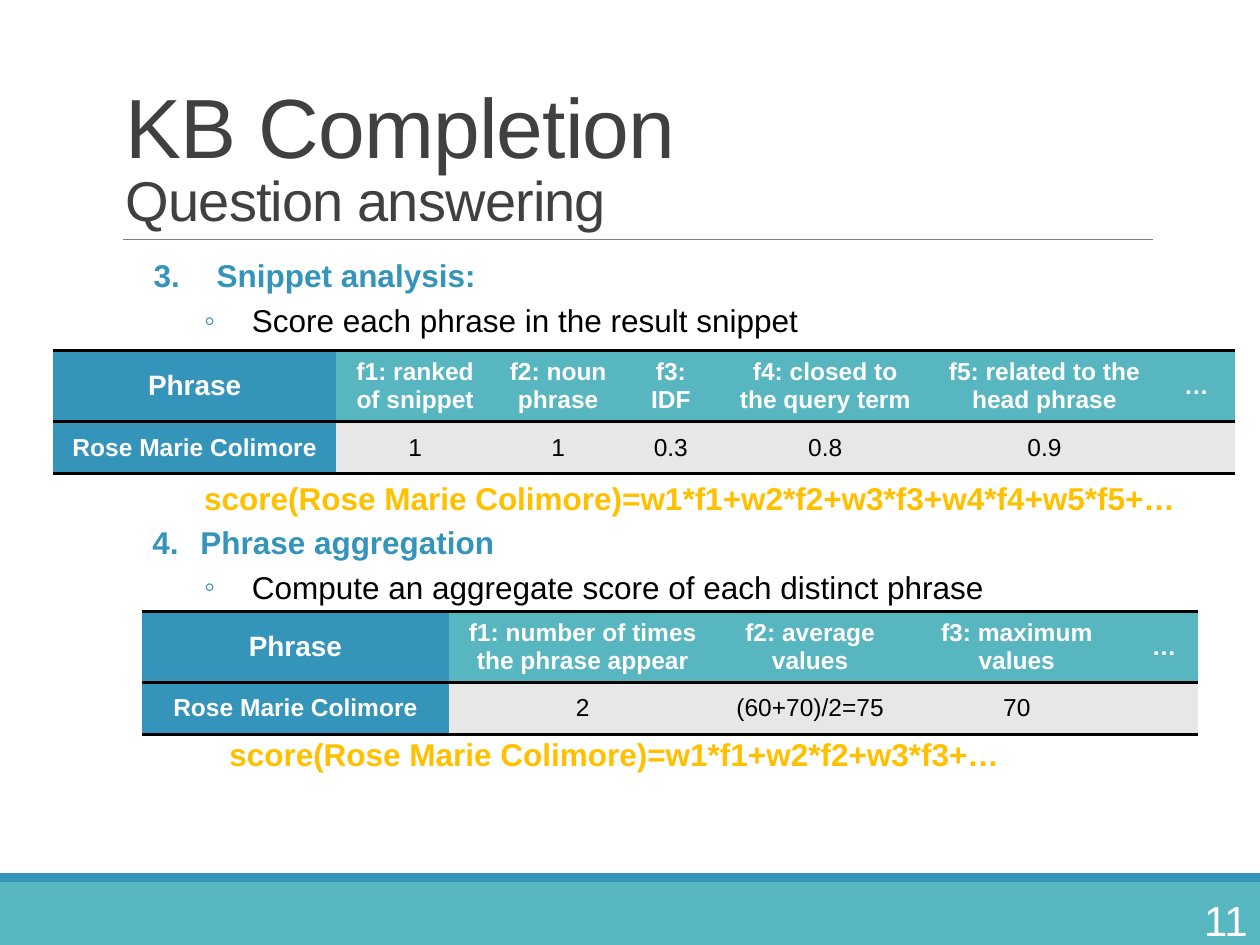
from lxml import etree
from pptx import Presentation
from pptx.dml.color import RGBColor
from pptx.enum.shapes import MSO_CONNECTOR, MSO_SHAPE
from pptx.enum.text import MSO_ANCHOR, PP_ALIGN
from pptx.oxml.ns import qn
from pptx.util import Inches, Pt

RECTANGLE = MSO_SHAPE.RECTANGLE
STRAIGHT = MSO_CONNECTOR.STRAIGHT
TOP, MIDDLE, BOTTOM = MSO_ANCHOR.TOP, MSO_ANCHOR.MIDDLE, MSO_ANCHOR.BOTTOM
LEFT, CENTER, RIGHT = PP_ALIGN.LEFT, PP_ALIGN.CENTER, PP_ALIGN.RIGHT

COLORS = {
    "blue": "3494BA",
    "teal": "58B6C0",
    "gray": "E7E7E7",
    "rule": "808080",
    "title": "404040",
    "gold": "FFC000",
    "black": "000000",
    "white": "FFFFFF",
}


def color(name):
    return RGBColor.from_string(COLORS[name])


def add_element(parent, tag, **attributes):
    return etree.SubElement(parent, qn(tag), attributes)


class SlideBuilder:
    """Draws the elements of one slide in a shared style."""

    font = "Arial"

    def __init__(self, slide):
        self.slide = slide

    def format_run(self, run, size, color_name, bold=False):
        run.font.name = self.font
        run.font.size = Pt(size)
        run.font.bold = bold
        run.font.color.rgb = color(color_name)

    def bar(self, top, height, fill):
        shape = self.slide.shapes.add_shape(
            RECTANGLE, 0, Inches(top), Inches(10), Inches(height))
        shape.shadow.inherit = False
        shape.fill.solid()
        shape.fill.fore_color.rgb = color(fill)
        shape.line.fill.background()

    def rule(self, left, right, y):
        line = self.slide.shapes.add_connector(
            STRAIGHT, Inches(left), Inches(y), Inches(right), Inches(y))
        line.line.color.rgb = color("rule")
        line.line.width = Pt(0.5)
        add_element(line._element.spPr, "a:effectLst")

    def text_box(self, left, top, width, height, anchor=TOP):
        box = self.slide.shapes.add_textbox(
            Inches(left), Inches(top), Inches(width), Inches(height))
        box.text_frame.word_wrap = True
        box.text_frame.vertical_anchor = anchor
        return box.text_frame

    def title(self, heading, subheading):
        paragraph = self.text_box(0.9, 0.31, 8.25, 1.59, BOTTOM).paragraphs[0]
        paragraph.text = f"{heading}\v{subheading}"
        paragraph.line_spacing = 0.85
        for run, size in zip(paragraph.runs, (48, 32)):
            self.format_run(run, size, "title")
            run.font._element.set("spc", "-50")

    def body(self, items):
        text_frame = self.text_box(0.9, 2.02, 8.77, 4.4)
        text_frame.margin_left = text_frame.margin_right = 0
        text_frame.text = "\n".join(item["text"] for item in items)
        for paragraph, item in zip(text_frame.paragraphs, items):
            paragraph.line_spacing = 0.9
            paragraph.space_before = Pt(item.get("before", 2))
            paragraph.space_after = Pt(4)
            self.format_run(paragraph.runs[0], 18, item["color"], item["bold"])
            self.bullet(paragraph, item)

    def bullet(self, paragraph, item):
        properties = paragraph._p.get_or_add_pPr()
        indent, hanging = item["indent"]
        properties.set("marL", str(Inches(indent)))
        properties.set("indent", str(Inches(-hanging)))
        if not hanging:
            add_element(properties, "a:buNone")
            return
        bullet_color = add_element(properties, "a:buClr")
        add_element(bullet_color, "a:srgbClr", val=COLORS["blue"])
        add_element(properties, "a:buFont", typeface=self.font)
        if "number" in item:
            add_element(properties, "a:buAutoNum", type="arabicPeriod",
                        startAt=str(item["number"]))
        else:
            add_element(properties, "a:buChar", char="◦")

    def slide_number(self, number):
        paragraph = self.text_box(8.92, 7.1, 1.08, 0.4, MIDDLE).paragraphs[0]
        paragraph.text = number
        paragraph.alignment = RIGHT
        self.format_run(paragraph.runs[0], 24, "white")

    def table(self, left, top, widths, rows):
        table = self.slide.shapes.add_table(
            len(rows), len(widths), Inches(left), Inches(top),
            Inches(sum(widths)), Inches(0.94)).table
        table.first_row = table.horz_banding = False
        for column, width in zip(table.columns, widths):
            column.width = Inches(width)
        for row, height in zip(table.rows, (0.53, 0.41)):
            row.height = Inches(height)
        for row_index, row in enumerate(rows):
            for column_index, text in enumerate(row):
                self.cell(table.cell(row_index, column_index), text,
                          row_index == 0, column_index == 0)

    def cell(self, cell, text, is_header, is_label):
        cell.text = text
        cell.vertical_anchor = MIDDLE
        cell.fill.solid()
        fill = "blue" if is_label else "teal" if is_header else "gray"
        cell.fill.fore_color.rgb = color(fill)
        paragraph = cell.text_frame.paragraphs[0]
        paragraph.alignment = CENTER
        strong = is_header or is_label
        for run in paragraph.runs:
            self.format_run(run, 16 if is_header and is_label else 14,
                            "white" if strong else "black", strong)
        self.cell_borders(cell)

    def cell_borders(self, cell):
        properties = cell._tc.get_or_add_tcPr()
        for index, side in enumerate(("lnL", "lnR", "lnT", "lnB")):
            border = etree.Element(qn(f"a:{side}"), w=str(Pt(2)))
            if side in ("lnT", "lnB"):
                fill = add_element(border, "a:solidFill")
                add_element(fill, "a:srgbClr", val=COLORS["black"])
            else:
                add_element(border, "a:noFill")
            properties.insert(index, border)


def main():
    presentation = Presentation()
    presentation.slide_width = Inches(10)
    presentation.slide_height = Inches(7.5)
    slide = presentation.slides.add_slide(presentation.slide_layouts[6])
    builder = SlideBuilder(slide)

    builder.bar(7, 0.5, "teal")
    builder.bar(6.93, 0.07, "blue")
    builder.rule(0.98, 9.15, 1.9)
    builder.title("KB Completion", "Question answering")

    step = {"color": "blue", "bold": True}
    detail = {"color": "black", "bold": False, "indent": (1.1, 0.38)}
    formula = {"color": "gold", "bold": True}
    builder.body([
        {**step, "text": "Snippet analysis:", "number": 3,
         "indent": (0.82, 0.5)},
        {**detail, "text": "Score each phrase in the result snippet"},
        {**formula, "before": 78, "indent": (0.72, 0),
         "text": "score(Rose Marie Colimore)=w1*f1+w2*f2+w3*f3+w4*f4+w5*f5+…"},
        {**step, "text": "Phrase aggregation", "number": 4,
         "indent": (0.69, 0.38)},
        {**detail,
         "text": "Compute an aggregate score of each distinct phrase"},
        {**formula, "before": 72, "indent": (0.92, 0),
         "text": "score(Rose Marie Colimore)=w1*f1+w2*f2+w3*f3+…"},
    ])
    builder.slide_number("11")

    builder.table(0.42, 2.78, (2.25, 1.25, 1.02, 0.77, 1.68, 1.8, 0.61), (
        ("Phrase", "f1: ranked of snippet", "f2: noun phrase", "f3: IDF",
         "f4: closed to the query term", "f5: related to the head phrase", "…"),
        ("Rose Marie Colimore", "1", "1", "0.3", "0.8", "0.9", ""),
    ))
    builder.table(1.13, 4.85, (2.43, 2.13, 1.48, 1.8, 0.54), (
        ("Phrase", "f1: number of times the phrase appear",
         "f2: average values", "f3: maximum values", "…"),
        ("Rose Marie Colimore", "2", "(60+70)/2=75", "70", ""),
    ))
    presentation.save("out.pptx")


if __name__ == "__main__":
    main()
